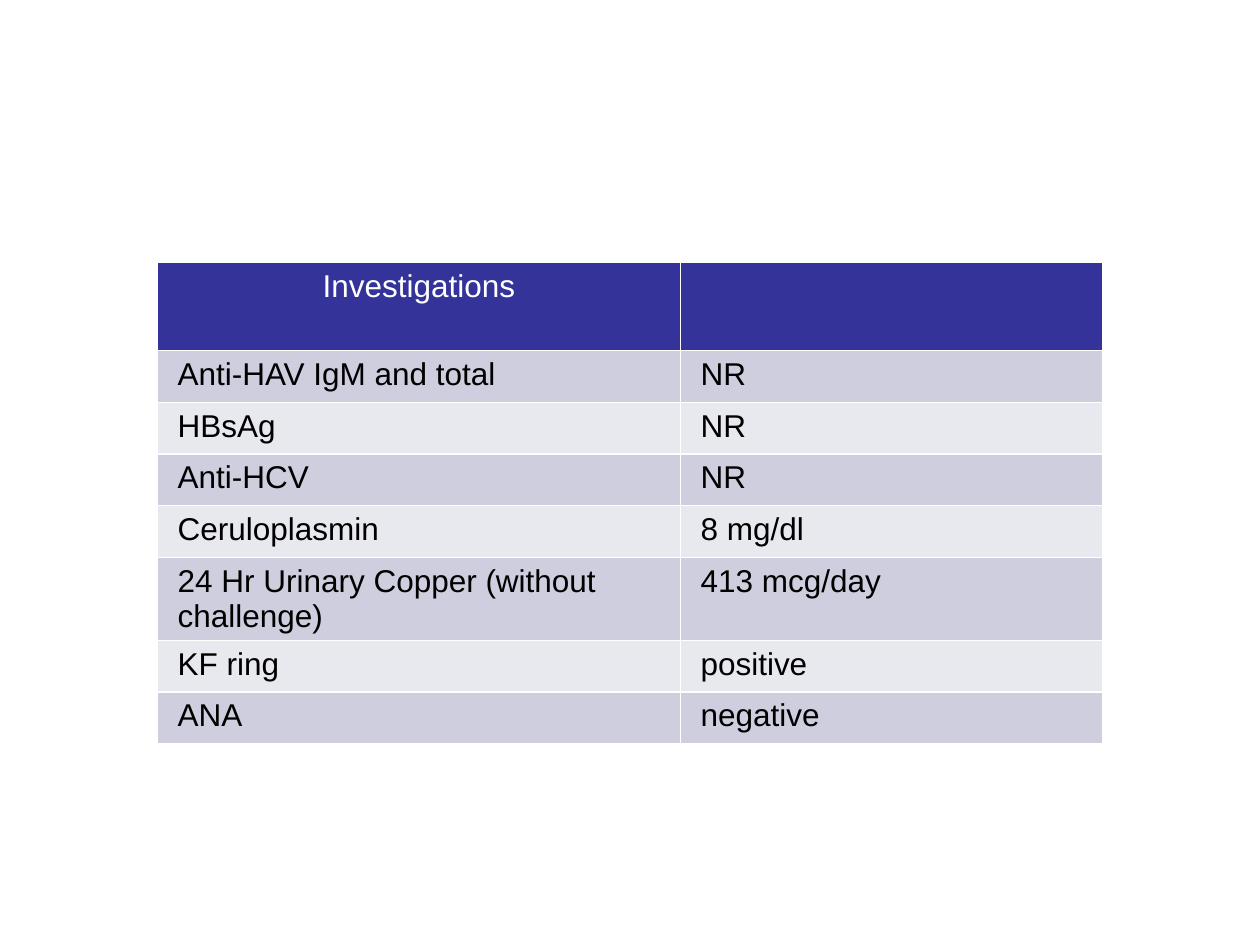
from lxml import etree
from pptx import Presentation
from pptx.dml.color import RGBColor
from pptx.enum.text import PP_ALIGN
from pptx.oxml.ns import qn
from pptx.util import Inches, Pt

CENTER, LEFT = PP_ALIGN.CENTER, PP_ALIGN.LEFT
COLORS = {
    "header": "333399",
    "odd": "CECEDE",
    "even": "E8E8EF",
    "border": "FFFFFF",
    "header_text": "FFFFFF",
    "text": "000000",
}
INVESTIGATIONS = [
    ("Investigations", ""),
    ("Anti-HAV IgM and total", "NR"),
    ("HBsAg", "NR"),
    ("Anti-HCV", "NR"),
    ("Ceruloplasmin", "8 mg/dl"),
    ("24 Hr Urinary Copper (without challenge)", "413 mcg/day"),
    ("KF ring", "positive"),
    ("ANA", "negative"),
]


class SlideBuilder:
    """Holds the table style and the current slide."""

    font_name = "Arial"
    font_size = Pt(18)
    border_width = Pt(1)
    margin_x, margin_y = Inches(0.16), Inches(0.05)
    header_height, row_height = Inches(0.7), Inches(0.41)

    def __init__(self, presentation):
        self.width = presentation.slide_width
        self.height = presentation.slide_height
        self.slide = presentation.slides.add_slide(presentation.slide_layouts[6])

    def add_table(self, rows, left, top, column_shares):
        heights = [self.header_height] + [self.row_height] * (len(rows) - 1)
        widths = [int(self.width * share) for share in column_shares]
        table = self.slide.shapes.add_table(
            len(rows), len(widths), int(self.width * left), int(self.height * top),
            sum(widths), sum(heights)).table
        for column, width in zip(table.columns, widths):
            column.width = width
        for index, (row, height, texts) in enumerate(zip(table.rows, heights, rows)):
            row.height = height
            fill = "header" if index == 0 else ("even", "odd")[index % 2]
            for cell, text in zip(row.cells, texts):
                self.format_cell(cell, text, fill)

    def format_cell(self, cell, text, fill):
        is_header = fill == "header"
        cell.margin_left = cell.margin_right = self.margin_x
        cell.margin_top = cell.margin_bottom = self.margin_y
        self.add_borders(cell)
        cell.fill.solid()
        cell.fill.fore_color.rgb = RGBColor.from_string(COLORS[fill])
        cell.text_frame.text = text
        paragraph = cell.text_frame.paragraphs[0]
        paragraph.alignment = CENTER if is_header else LEFT
        for run in paragraph.runs:
            run.font.name = self.font_name
            run.font.size = self.font_size
            run.font.bold = False
            color = COLORS["header_text" if is_header else "text"]
            run.font.color.rgb = RGBColor.from_string(color)

    def add_borders(self, cell):
        properties = cell._tc.get_or_add_tcPr()
        for side in ("a:lnL", "a:lnR", "a:lnT", "a:lnB"):
            line = etree.SubElement(properties, qn(side), w=str(self.border_width))
            solid = etree.SubElement(line, qn("a:solidFill"))
            etree.SubElement(solid, qn("a:srgbClr"), val=COLORS["border"])


def main():
    presentation = Presentation()
    presentation.slide_width = Inches(10)
    presentation.slide_height = Inches(7.5)
    builder = SlideBuilder(presentation)
    builder.add_table(INVESTIGATIONS, left=1 / 8, top=5 / 18, column_shares=(0.415, 0.335))
    presentation.save("out.pptx")


if __name__ == "__main__":
    main()
